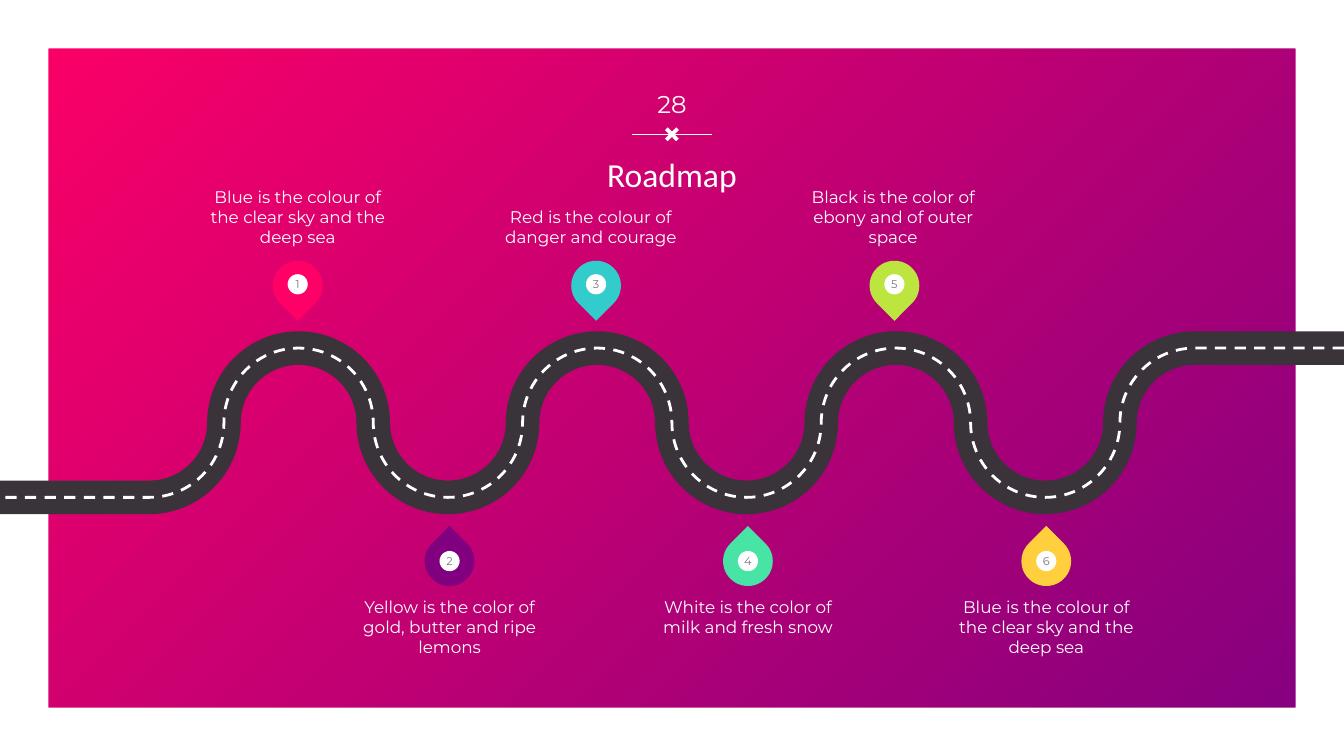
from dataclasses import dataclass
from math import cos, pi

from lxml import etree
from pptx import Presentation
from pptx.dml.color import RGBColor
from pptx.enum.dml import MSO_LINE
from pptx.enum.shapes import MSO_CONNECTOR, MSO_SHAPE as Preset
from pptx.enum.text import MSO_ANCHOR as Anchor, PP_ALIGN
from pptx.oxml.ns import qn
from pptx.util import Inches, Pt

WHITE, PINK, PURPLE = "FFFFFF", "FF0066", "800080"
ASPHALT, GREY = "3A343A", "7C727C"
BODY_FONT = "Montserrat"

ROAD_TOP, BEND_RADIUS = 2.59, 10 / 18
BEND_START, QUARTER_BENDS = 16 * BEND_RADIUS, 14
# Start angle and swing of each quarter bend, driving from right to left
BEND_CYCLE = [(270, -90), (0, 90), (90, 90), (0, -90)]

PIN_SIZE, DISC_SIZE = 0.37, 0.15
CAPTION_WIDTH, CAPTION_HEIGHT = 1.41, 0.58


@dataclass(frozen=True)
class Side:
    """Heights shared by all stops above or below the road."""
    pin_y: float
    disc_y: float
    rotation: int
    caption_top: float
    anchor: Anchor


@dataclass(frozen=True)
class Stop:
    number: int
    x: float
    caption_x: float
    side: Side
    color: str
    caption: str


ABOVE = Side(2.125, 2.115, 135, 1.26, Anchor.BOTTOM)
BELOW = Side(4.175, 4.175, 315, 4.44, Anchor.TOP)

STOPS = [
    Stop(1, 2.215, 2.215, ABOVE, PINK,
         "Blue is the colour of the clear sky and the deep sea"),
    Stop(2, 3.345, 3.345, BELOW, PURPLE,
         "Yellow is the color of gold, butter and ripe lemons"),
    Stop(3, 4.435, 4.395, ABOVE, "33CCCC",
         "Red is the colour of danger and courage"),
    Stop(4, 5.565, 5.565, BELOW, "48E4A6",
         "White is the color of milk and fresh snow"),
    Stop(5, 6.655, 6.645, ABOVE, "BCE63F",
         "Black is the color of ebony and of outer space"),
    Stop(6, 7.785, 7.785, BELOW, "FFCF3E",
         "Blue is the colour of the clear sky and the deep sea"),
]


def rgb(hex_color: str) -> RGBColor:
    return RGBColor.from_string(hex_color)


def write(shape, text: str, size: float, color: str, font: str = BODY_FONT,
          anchor: Anchor = Anchor.MIDDLE, inset: float = 0) -> None:
    frame = shape.text_frame
    frame.word_wrap = True
    frame.vertical_anchor = anchor
    frame.margin_left = frame.margin_right = Inches(inset)
    frame.margin_top = frame.margin_bottom = Inches(inset)
    paragraph = frame.paragraphs[0]
    paragraph.alignment = PP_ALIGN.CENTER
    run = paragraph.add_run()
    run.text = text
    run.font.name = font
    run.font.size = Pt(size)
    run.font.color.rgb = rgb(color)


def add_text(shapes, left: float, top: float, width: float, height: float,
             text: str, size: float, **style) -> None:
    box = shapes.add_textbox(Inches(left), Inches(top), Inches(width), Inches(height))
    write(box, text, size, WHITE, **style)


def add_preset(shapes, preset: Preset, x: float, y: float, width: float,
               height: float, color: str):
    """Add a plain filled shape centred on x, y."""
    shape = shapes.add_shape(preset, Inches(x - width / 2), Inches(y - height / 2),
                             Inches(width), Inches(height))
    shape.shadow.inherit = False
    shape.fill.solid()
    shape.fill.fore_color.rgb = rgb(color)
    shape.line.fill.background()
    return shape


def add_road_line(shapes, color: str, width: float, dash=None) -> None:
    """Draw the road's centre line, with round arcs for its quarter bends."""
    middle = ROAD_TOP + BEND_RADIUS
    points = [(BEND_START - k * BEND_RADIUS, middle - BEND_RADIUS * cos(k * pi / 2))
              for k in range(QUARTER_BENDS + 1)]
    points.append((0, ROAD_TOP + 2 * BEND_RADIUS))
    builder = shapes.build_freeform(Inches(10), Inches(ROAD_TOP))
    builder.add_line_segments([(Inches(x), Inches(y)) for x, y in points], close=False)
    road = builder.convert_to_shape()
    road.shadow.inherit = False
    road.fill.background()
    road.line.color.rgb = rgb(color)
    road.line.width = Pt(width)
    if dash is not None:
        road.line.dash_style = dash

    radius = str(Inches(BEND_RADIUS))
    segments = list(road._element.iter(qn("a:lnTo")))
    for k, segment in enumerate(segments[1:-1]):
        start, swing = BEND_CYCLE[k % len(BEND_CYCLE)]
        arc = etree.Element(qn("a:arcTo"), wR=radius, hR=radius,
                            stAng=str(start * 60000), swAng=str(swing * 60000))
        segment.getparent().replace(segment, arc)


def add_stop(shapes, stop: Stop) -> None:
    side = stop.side
    marker = shapes.add_group_shape().shapes
    pin = add_preset(marker, Preset.TEAR, stop.x, side.pin_y,
                     PIN_SIZE, PIN_SIZE, stop.color)
    pin.rotation = side.rotation
    disc = add_preset(marker, Preset.OVAL, stop.x, side.disc_y,
                      DISC_SIZE, DISC_SIZE, WHITE)
    write(disc, str(stop.number), 6, GREY)
    add_text(shapes, stop.caption_x - CAPTION_WIDTH / 2, side.caption_top,
             CAPTION_WIDTH, CAPTION_HEIGHT, stop.caption, 9, anchor=side.anchor)


def add_heading(shapes) -> None:
    rule = shapes.add_connector(MSO_CONNECTOR.STRAIGHT, Inches(4.7), Inches(1),
                                Inches(5.3), Inches(1))
    rule.line.color.rgb = rgb(WHITE)
    rule.line.width = Pt(0.75)
    etree.SubElement(rule._element.spPr, qn("a:effectLst"))
    cross = add_preset(shapes, Preset.MATH_MULTIPLY, 5, 1, 0.16, 0.16, WHITE)
    cross.adjustments[0] = 0.174
    add_text(shapes, 0.36, 1.08, 9.28, 0.43, "Roadmap", 18, font="Calibri", inset=0.1)
    add_text(shapes, 4.7, 0.56, 0.6, 0.43, "28", 13, inset=0.1)


def paint_background(slide) -> None:
    fill = slide.background.fill
    fill.gradient()
    fill.gradient_angle = 315
    for stop, position, color in zip(fill.gradient_stops, (0, 1), (PINK, PURPLE)):
        stop.position = position
        stop.color.rgb = rgb(color)


def main() -> None:
    deck = Presentation()
    deck.slide_width, deck.slide_height = Inches(10), Inches(5.625)
    slide = deck.slides.add_slide(deck.slide_layouts[6])
    shapes = slide.shapes

    paint_background(slide)
    border = add_preset(shapes, Preset.FRAME, 5, 2.8125, 10, 5.625, WHITE)
    border.adjustments[0] = 0.064
    add_heading(shapes)
    add_road_line(shapes, ASPHALT, 18)
    add_road_line(shapes, WHITE, 1.5, MSO_LINE.DASH)
    for stop in STOPS:
        add_stop(shapes, stop)
    deck.save("out.pptx")


if __name__ == "__main__":
    main()
